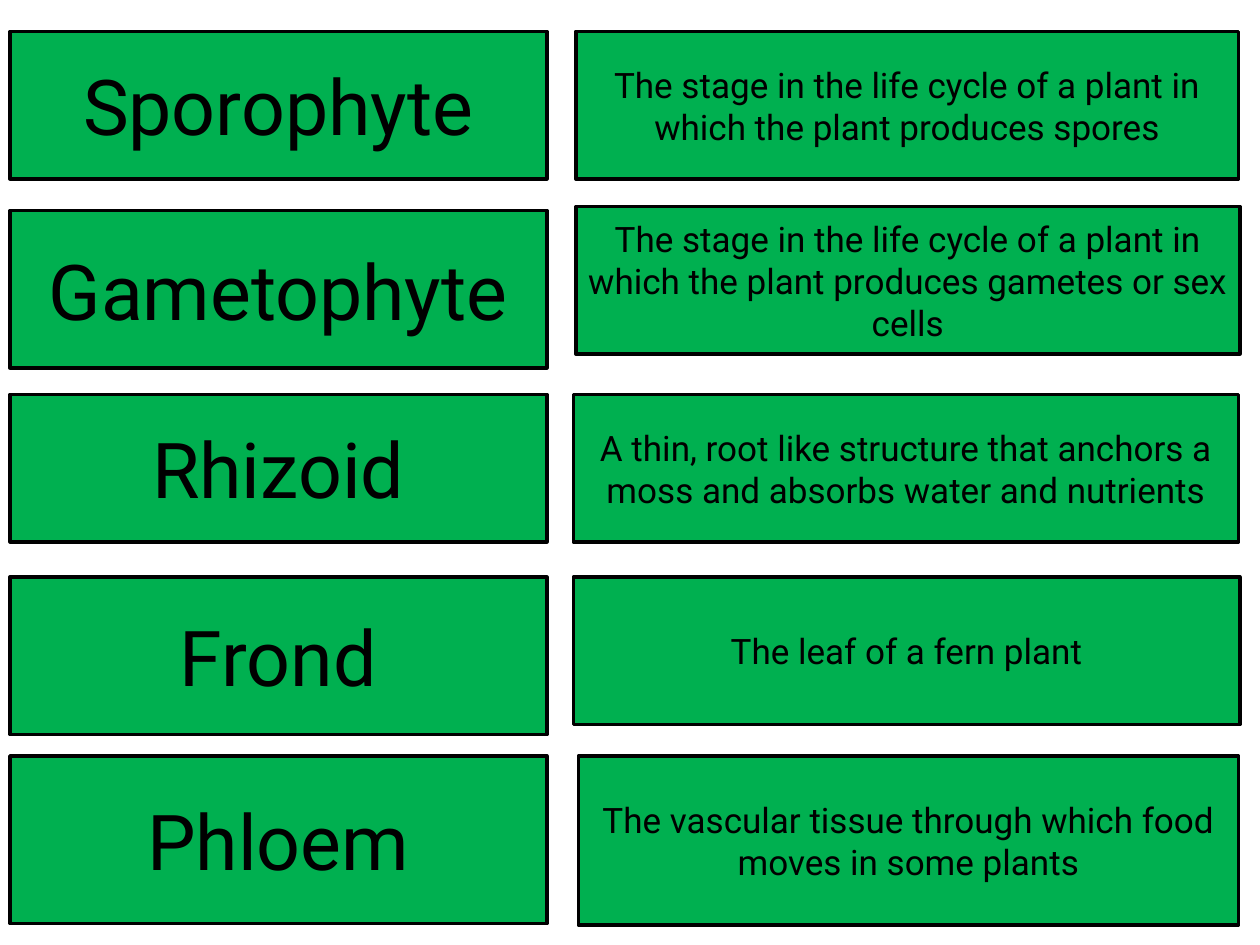
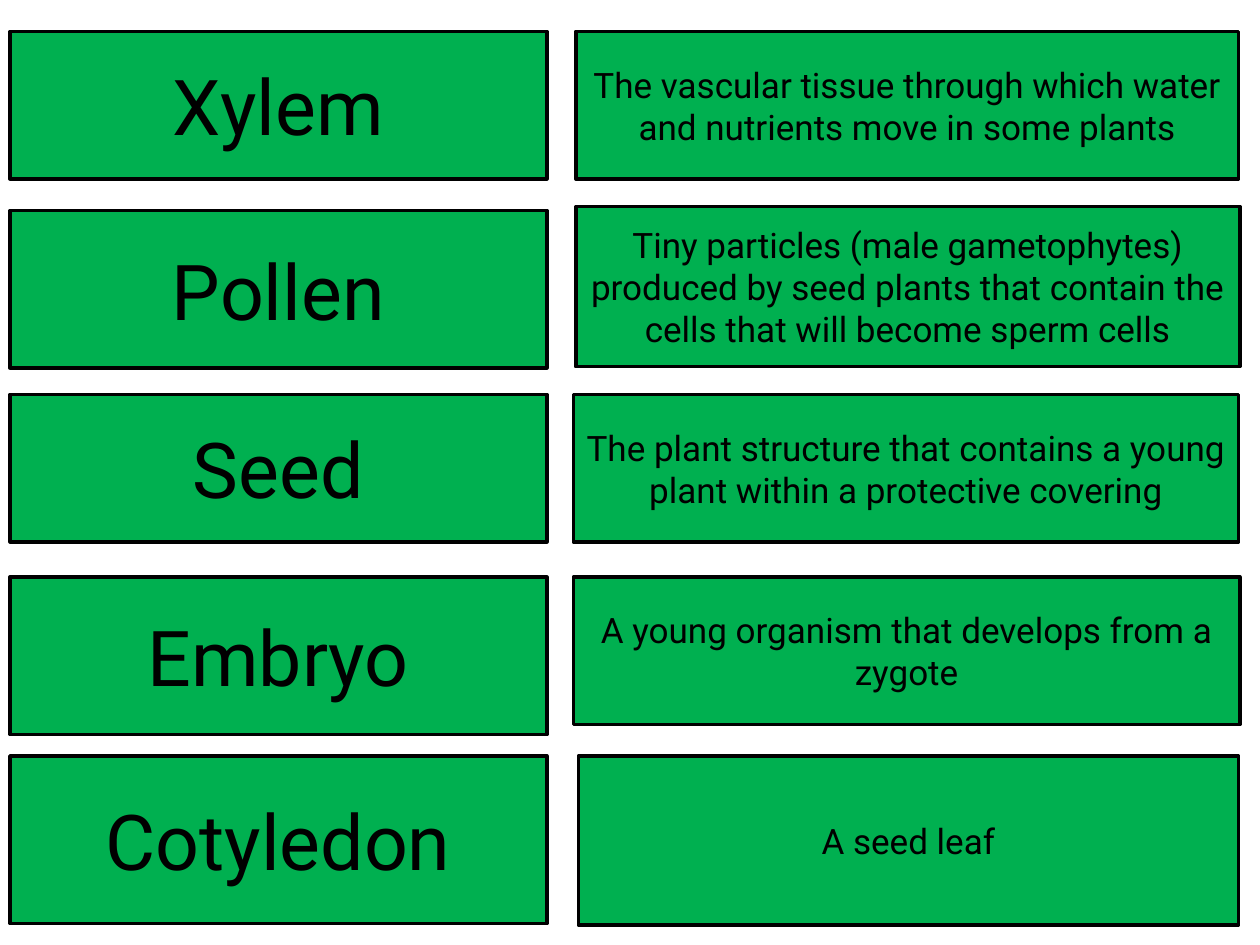
from pptx import Presentation
from pptx.dml.color import RGBColor
from pptx.enum.shapes import MSO_SHAPE as SHAPE
from pptx.enum.text import MSO_ANCHOR as ANCHOR, PP_ALIGN as ALIGN
from pptx.util import Pt

PX = 9144  # 100 px to the inch
COLORS = {"card": "00B050", "ink": "000000"}
TERM_SIZE, DEFINITION_SIZE = Pt(44), Pt(20)

# Term column: one left edge and width, with a top and height per row
TERM_LEFT, TERM_WIDTH = 8, 426
TERM_ROWS = [(25, 117), (167, 125), (313, 117), (458, 125), (600, 133)]

# Definition column: left, top, width, height per row
DEFINITION_ROWS = [
    (457, 25, 526, 117),
    (457, 164, 527, 117),
    (455, 313, 528, 117),
    (455, 458, 529, 117),
    (459, 600, 524, 134),
]
TALL_DEFINITIONS = {"Pollen": 127}  # three full lines need a taller card

GLOSSARY = [
    [
        ("Sporophyte", "The stage in the life cycle of a plant in which the plant produces spores"),
        ("Gametophyte", "The stage in the life cycle of a plant in which the plant produces "
                        "gametes or sex cells"),
        ("Rhizoid", "A thin, root like structure that anchors a moss and absorbs water "
                    "and nutrients"),
        ("Frond", "The leaf of a fern plant"),
        ("Phloem", "The vascular tissue through which food moves in some plants"),
    ],
    [
        ("Xylem", "The vascular tissue through which water and nutrients move in some plants"),
        ("Pollen", "Tiny particles (male gametophytes) produced by seed plants that contain "
                   "the cells that will become sperm cells"),
        ("Seed", "The plant structure that contains a young plant within a protective covering"),
        ("Embryo", "A young organism that develops from a zygote"),
        ("Cotyledon", "A seed leaf"),
    ],
]


def color(name):
    return RGBColor.from_string(COLORS[name])


def add_card(page, bounds, text, size):
    box = page.shapes.add_shape(SHAPE.FLOWCHART_PROCESS, *(n * PX for n in bounds))
    box.shadow.inherit = False
    box.fill.solid()
    box.fill.fore_color.rgb = color("card")
    box.line.color.rgb = color("ink")
    box.line.width = Pt(2)
    frame = box.text_frame
    frame.word_wrap = True
    frame.vertical_anchor = ANCHOR.MIDDLE
    para = frame.paragraphs[0]
    para.alignment = ALIGN.CENTER
    span = para.add_run()
    span.text = text
    for attribute, value in {"name": "Roboto", "size": size}.items():
        setattr(span.font, attribute, value)
    span.font.color.rgb = color("ink")


deck = Presentation()
deck.slide_width, deck.slide_height = 1000 * PX, 750 * PX

# One page of term and definition cards per glossary group
for entries in GLOSSARY:
    page = deck.slides.add_slide(deck.slide_layouts[6])
    for (term, definition), (top, height), place in zip(entries, TERM_ROWS, DEFINITION_ROWS):
        add_card(page, (TERM_LEFT, top, TERM_WIDTH, height), term, TERM_SIZE)
        *corner_and_width, usual_height = place
        card_height = TALL_DEFINITIONS.get(term, usual_height)
        add_card(page, (*corner_and_width, card_height), definition, DEFINITION_SIZE)

deck.save("out.pptx")
